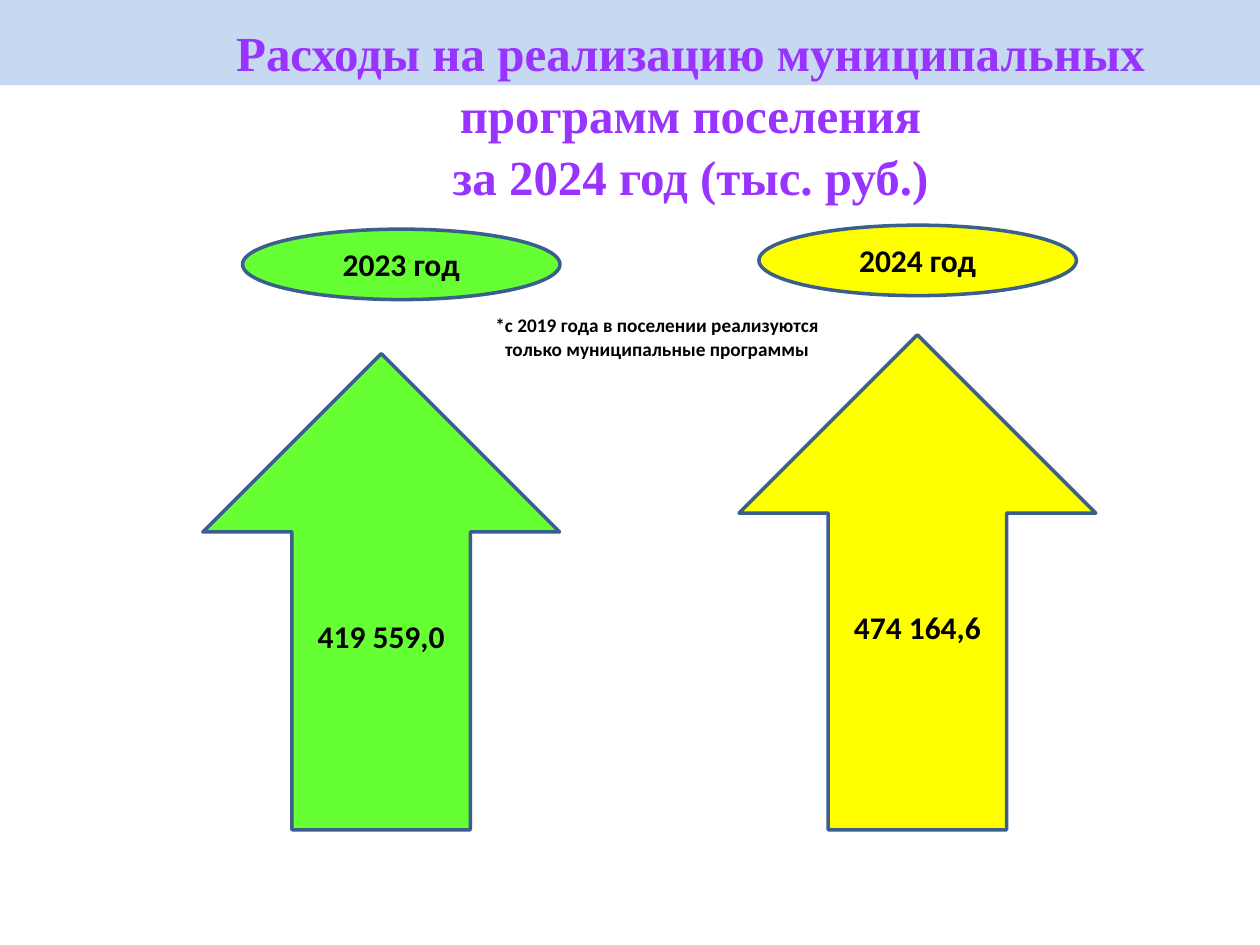
from pptx import Presentation
from pptx import util as u
from pptx.dml import color
from pptx.enum import shapes, text

COLORS = {
    "band": "C6D9F1", "title": "9933FF", "outline": "3A5F8C",
    "green": "66FF33", "yellow": "FFFF00", "text": "000000",
}
TITLE_FORMAT = {"name": "Times New Roman", "size": u.Pt(28), "bold": True}
LABEL_FORMAT = {"name": "Calibri", "size": u.Pt(18), "bold": True}
NOTE_FORMAT = {"name": "Calibri", "size": u.Pt(11), "bold": True}


def rgb(name):
    return color.RGBColor.from_string(COLORS[name])


def write(shape, lines, font_format, color_name, spacing=1.0):
    frame = shape.text_frame
    frame.word_wrap = True
    for index, line in enumerate(lines):
        paragraph = frame.add_paragraph() if index else frame.paragraphs[0]
        paragraph.text = line
        paragraph.alignment = text.PP_ALIGN.CENTER
        paragraph.line_spacing = spacing
        for name, value in font_format.items():
            setattr(paragraph.font, name, value)
        paragraph.font.color.rgb = rgb(color_name)


def add_filled(slide, kind, box, fill):
    shape = slide.shapes.add_shape(kind, *map(u.Cm, box))
    shape.shadow.inherit = False
    shape.fill.solid()
    shape.fill.fore_color.rgb = rgb(fill)
    return shape


def add_label(slide, kind, box, fill, label):
    shape = add_filled(slide, kind, box, fill)
    shape.line.color.rgb = rgb("outline")
    shape.line.width = u.Pt(2)
    shape.text_frame.vertical_anchor = text.MSO_ANCHOR.MIDDLE
    write(shape, [label], LABEL_FORMAT, "text")


def add_header(slide, box):
    left, top, width, height = box
    # Band across the top
    band = add_filled(slide, shapes.MSO_SHAPE.RECTANGLE, (left, top, width, 1.72), "band")
    band.line.fill.background()
    # Title
    title = slide.shapes.add_textbox(
        u.Cm(left + 2.92), u.Cm(top + 0.28), u.Cm(width - 3.4), u.Cm(height - 0.28))
    write(title, ["Расходы на реализацию муниципальных программ поселения",
                  "за 2024 год (тыс. руб.)"], TITLE_FORMAT, "title", 1.05)


def add_year(slide, box, oval_offset, arrow_top, fill, year, amount):
    left, top, width, height = box
    # Amount arrow, standing on the bottom of the box
    add_label(slide, shapes.MSO_SHAPE.UP_ARROW,
              (left, top + arrow_top, width, height - arrow_top), fill, amount)
    # Year oval
    add_label(slide, shapes.MSO_SHAPE.OVAL,
              (left + oval_offset, top, 6.4, 1.42), fill, year)


def add_note(slide, box):
    note = slide.shapes.add_textbox(*map(u.Cm, box))
    write(note, ["*с 2019 года в поселении реализуются",
                 "только муниципальные программы"], NOTE_FORMAT, "text")


def main():
    presentation = Presentation()
    presentation.slide_width, presentation.slide_height = u.Cm(25.4), u.Cm(19.05)
    slide = presentation.slides.add_slide(presentation.slide_layouts[6])

    add_header(slide, (0, 0, 25.4, 4.11))
    add_year(slide, (4.09, 4.62, 7.19, 12.11), 0.8, 2.51, "green", "2023 год", "419 559,0")
    add_year(slide, (14.9, 4.54, 7.19, 12.19), 0.4, 2.21, "yellow", "2024 год", "474 164,6")
    add_note(slide, (6.9, 6.2, 12.7, 1.19))

    presentation.save("out.pptx")


if __name__ == "__main__":
    main()
